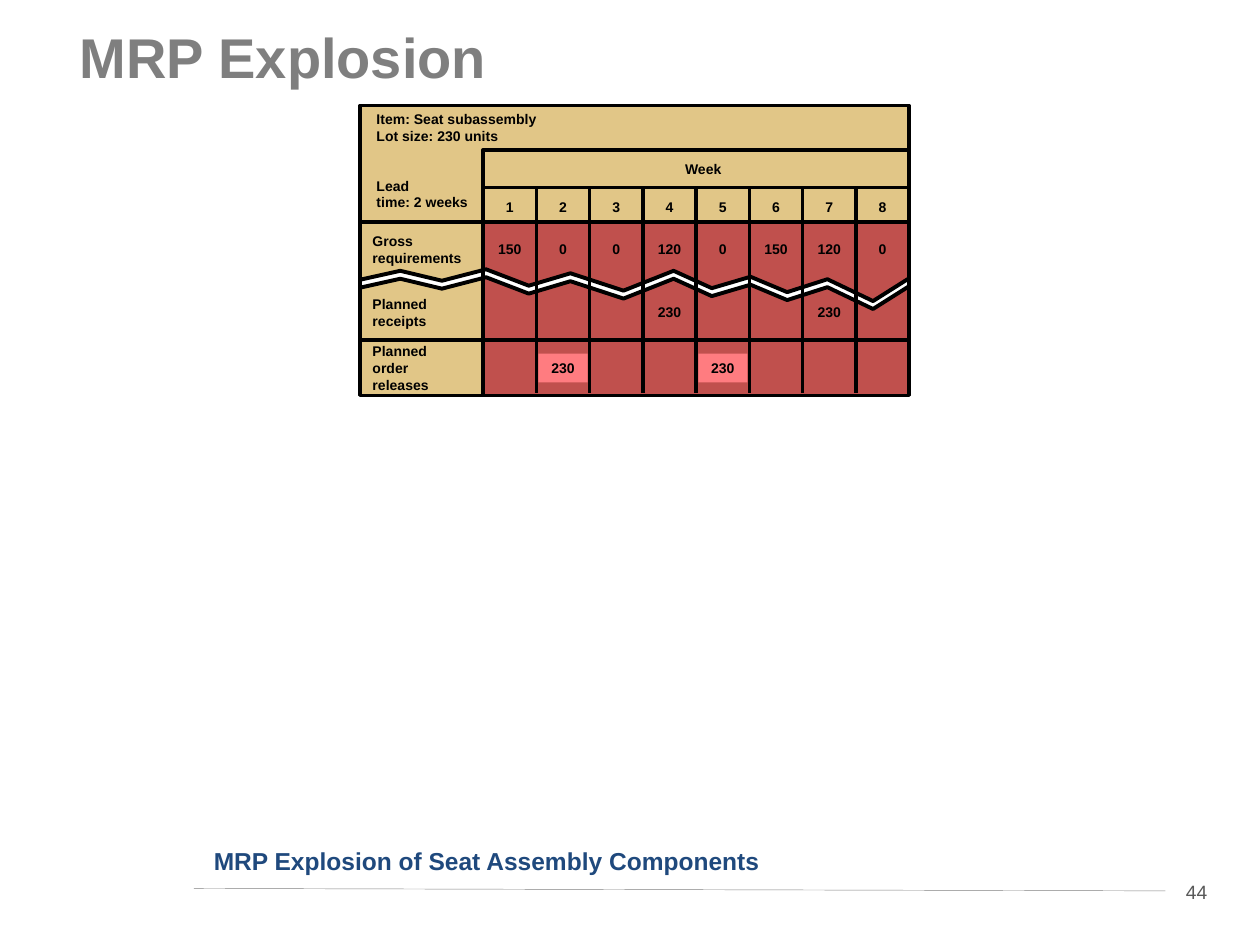
from dataclasses import dataclass

from lxml.etree import SubElement
from pptx import Presentation
from pptx.dml.color import RGBColor
from pptx.enum.shapes import MSO_CONNECTOR, MSO_SHAPE
from pptx.enum.text import MSO_ANCHOR, PP_ALIGN
from pptx.oxml.ns import qn
from pptx.util import Cm, Pt


@dataclass(frozen=True)
class Theme:
    """Colours, type sizes and line widths of the slide."""
    font: str = "Arial"
    ink: str = "000000"
    paper: str = "FFFFFF"
    heading: str = "7F7F7F"
    caption: str = "1F497D"
    number: str = "595959"
    rule: str = "808080"
    label_fill: str = "E1C687"
    cell_fill: str = "C0504D"
    highlight: str = "FF7C80"
    heading_size: float = 32
    caption_size: float = 14
    number_size: float = 11
    table_size: float = 8
    grid_line: float = 2
    tear_line: float = 2.25
    rule_line: float = 0.25


THEME = Theme()
WEEKS = 8
LABEL_WIDTH = 2.48
WEEK_TOP, NUMBERS_TOP, GROSS_TOP, RELEASES_TOP = 0.89, 1.65, 2.34, 4.72
TEAR_GAP = 0.16
TEAR = [(0, 3.51), (0.81, 3.33), (1.65, 3.53), (2.54, 3.3), (3.4, 3.63),
        (4.24, 3.38), (5.31, 3.73), (6.32, 3.33), (7.09, 3.68), (7.87, 3.45),
        (8.61, 3.76), (9.42, 3.5), (10.34, 3.94), (11.07, 3.48)]
ROW_LABELS = [("Gross requirements", 2.44, 2.34, 0.91),
              ("Planned receipts", 3.71, 2.29, 0.94),
              ("Planned order releases", 4.65, 2.16, 1.27)]
WEEK_ROWS = [(1.75, {week: str(week) for week in range(1, WEEKS + 1)}, None),
             (2.6, dict(enumerate("150 0 0 120 0 150 120 0".split(), 1)), None),
             (3.86, {4: "230", 7: "230"}, None),
             (5.0, {2: "230", 5: "230"}, THEME.highlight)]


def rgb(code):
    """Turn a hex code into a colour."""
    return RGBColor.from_string(code)


def write(frame, text, size=THEME.table_size, color=THEME.ink, bold=True,
          align=PP_ALIGN.LEFT, anchor=MSO_ANCHOR.TOP, wrap=True, spacing=None):
    """Fill a text frame with one paragraph for each line of text."""
    frame.word_wrap = wrap
    frame.vertical_anchor = anchor
    frame.text = text
    for paragraph in frame.paragraphs:
        paragraph.alignment = align
        paragraph.line_spacing = spacing
        font = paragraph.runs[0].font
        font.name, font.size, font.bold = THEME.font, Pt(size), bold
        font.color.rgb = rgb(color)


def add_text(shapes, box, text, fill=None, **style):
    """Add a text box, given in centimetres, with an optional fill."""
    label = shapes.add_textbox(*map(Cm, box))
    if fill:
        label.fill.solid()
        label.fill.fore_color.rgb = rgb(fill)
    write(label.text_frame, text, **style)
    return label


def add_line(shapes, start, end, color=THEME.ink, width=THEME.grid_line):
    """Add a straight line without a shadow."""
    line = shapes.add_connector(MSO_CONNECTOR.STRAIGHT, *map(Cm, (*start, *end)))
    line.line.color.rgb = rgb(color)
    line.line.width = Pt(width)
    SubElement(line.line._get_or_add_ln().getparent(), qn("a:effectLst"))


def add_outline(shapes, points, fill=None, width=None):
    """Add a filled closed area or, without a fill, an open line."""
    first, *rest = [(Cm(x), Cm(y)) for x, y in points]
    builder = shapes.build_freeform(*first)
    builder.add_line_segments(rest, close=bool(fill))
    outline = builder.convert_to_shape()
    outline.shadow.inherit = False
    if fill:
        outline.fill.solid()
        outline.fill.fore_color.rgb = rgb(fill)
        outline.line.fill.background()
    else:
        outline.fill.background()
        outline.line.color.rgb = rgb(THEME.ink)
        outline.line.width = Pt(width)


def heading_region(slide, box):
    """Place the slide title."""
    title = slide.shapes.title
    title.left, title.top, title.width, title.height = map(Cm, box)
    write(title.text_frame, "MRP Explosion", size=THEME.heading_size,
          color=THEME.heading)


def table_fills(shapes, left, top, width, height):
    """Fill the label and week areas on both sides of the tear."""
    def place(points):
        return [(left + x, top + y) for x, y in points]

    lower_tear = [(x, y + TEAR_GAP) for x, y in TEAR]
    for tear, label_edge, week_edge in ((TEAR, 0, GROSS_TOP),
                                        (lower_tear, height, height)):
        add_outline(shapes, place([(width, label_edge), (0, label_edge), *tear]),
                    fill=THEME.label_fill)
        add_outline(shapes, place([(width, week_edge), (LABEL_WIDTH, week_edge),
                                   (LABEL_WIDTH, tear[3][1]), *tear[3:]]),
                    fill=THEME.cell_fill)
    for tear in (lower_tear, TEAR):
        add_outline(shapes, place(tear), width=THEME.tear_line)


def table_grid(shapes, left, top, width, height):
    """Draw the frame, the row lines and the week lines."""
    frame = shapes.add_shape(MSO_SHAPE.RECTANGLE, *map(Cm, (left, top, width, height)))
    frame.shadow.inherit = False
    frame.fill.background()
    frame.line.color.rgb = rgb(THEME.ink)
    frame.line.width = Pt(THEME.grid_line)
    right, weeks_left = left + width, left + LABEL_WIDTH
    add_outline(shapes, [(weeks_left, top + height), (weeks_left, top + WEEK_TOP),
                         (right, top + WEEK_TOP)], width=THEME.grid_line)
    for start, offset in ((weeks_left, NUMBERS_TOP), (left, GROSS_TOP),
                          (left, RELEASES_TOP)):
        add_line(shapes, (start, top + offset), (right, top + offset))
    week_width = (width - LABEL_WIDTH) / WEEKS
    for week in range(1, WEEKS):
        x = weeks_left + week * week_width
        add_line(shapes, (x, top + NUMBERS_TOP), (x, top + height - 0.05))


def table_texts(shapes, left, top, width):
    """Write the item details, the row labels and the week values."""
    details = add_text(shapes, (left + 0.08, top - 0.03, 4.5, 2.29),
                       "Item: Seat subassembly\nLot size: 230 units\n"
                       "Lead\ntime: 2 weeks")
    details.text_frame.paragraphs[2].space_before = Pt(19)
    add_text(shapes, (left + 6.3, top + 0.99, 1.24, 0.58), "Week", wrap=False)
    for text, offset, label_width, label_height in ROW_LABELS:
        add_text(shapes, (left, top + offset, label_width, label_height), text)
    week_width = (width - LABEL_WIDTH) / WEEKS
    for offset, values, fill in WEEK_ROWS:
        for week, value in values.items():
            value_width = 0.66 if len(value) == 1 else 0.99
            center = left + LABEL_WIDTH + (week - 0.5) * week_width
            add_text(shapes, (center - value_width / 2, top + offset, value_width, 0.58),
                     value, fill=fill, align=PP_ALIGN.CENTER, wrap=False)


def table_region(slide, box):
    """Build the torn MRP record as one group."""
    left, top, width, height = box
    shapes = slide.shapes.add_group_shape().shapes
    table_fills(shapes, left, top, width, height)
    table_grid(shapes, left, top, width, height)
    table_texts(shapes, left, top, width)


def footer_region(slide, box):
    """Place the caption, the rule and the page number."""
    left, top, width, height = box
    number_left = left + width - 1.27
    add_text(slide.shapes, (number_left, top + 0.61, 1.27, height - 0.61), "44",
             fill=THEME.paper, size=THEME.number_size, color=THEME.number,
             bold=False, align=PP_ALIGN.CENTER, anchor=MSO_ANCHOR.MIDDLE)
    add_line(slide.shapes, (left, top + 0.92), (number_left, top + 0.97),
             color=THEME.rule, width=THEME.rule_line)
    add_text(slide.shapes, (left + 0.15, top, 15.27, 0.81),
             "MRP Explosion of Seat Assembly Components",
             size=THEME.caption_size, color=THEME.caption, spacing=0.9)


def main():
    """Build and save the slide."""
    deck = Presentation()
    deck.slide_width, deck.slide_height = Cm(25.4), Cm(19.05)
    slide = deck.slides.add_slide(deck.slide_layouts[5])
    heading_region(slide, (1.35, 0.33, 22.71, 2.57))
    table_region(slide, (7.26, 2.13, 11.07, 5.84))
    footer_region(slide, (3.91, 16.99, 20.85, 1.35))
    deck.save("out.pptx")


if __name__ == "__main__":
    main()
